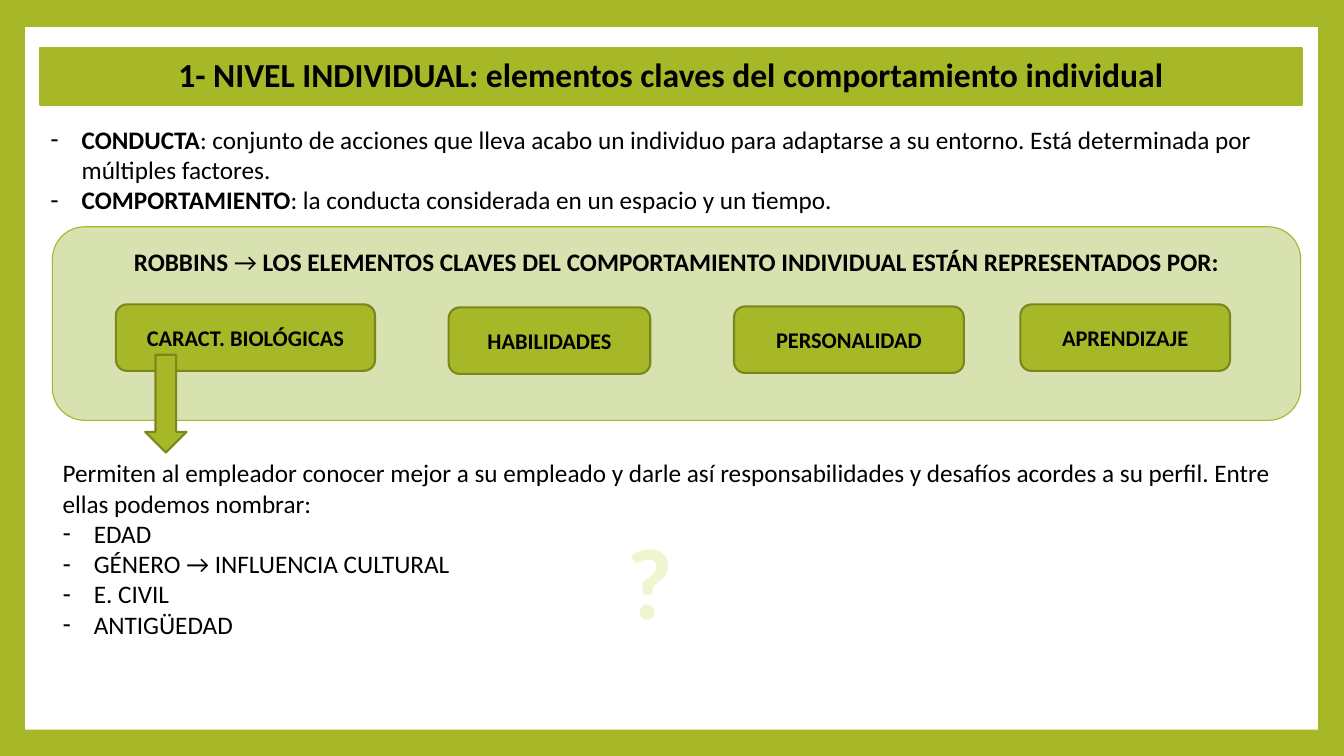
import pptx
import pptx.util
import pptx.dml.color
import pptx.enum.shapes
import pptx.enum.text
import pptx.oxml
import pptx.oxml.ns

Inches = pptx.util.Inches
Pt = pptx.util.Pt
RGBColor = pptx.dml.color.RGBColor
SHAPE = pptx.enum.shapes.MSO_SHAPE
ALIGN = pptx.enum.text.PP_ALIGN
ANCHOR = pptx.enum.text.MSO_ANCHOR
AUTO_SIZE = pptx.enum.text.MSO_AUTO_SIZE

GREEN = RGBColor(0xA6, 0xB7, 0x27)
DARK_GREEN = RGBColor(0x7B, 0x87, 0x1D)
PALE_GREEN = RGBColor(0xD8, 0xE1, 0xB0)
FAINT_GREEN = RGBColor(0xF0, 0xF5, 0xD0)
WHITE = RGBColor(0xFF, 0xFF, 0xFF)
BLACK = RGBColor(0x00, 0x00, 0x00)

FONT = "Calibri"
HANGING = Inches(0.31)
FRAME_FORMAT = {"word_wrap": True, "auto_size": AUTO_SIZE.NONE}
PARAGRAPH_FORMAT = {"space_before": Pt(0), "space_after": Pt(0), "line_spacing": 1.0}


def apply_format(target, values):
    for name, value in values.items():
        setattr(target, name, value)


def place(part, box):
    lengths = [Inches(value) for value in box]
    apply_format(part, dict(zip(("left", "top", "width", "height"), lengths)))


def paint(part, fill, line, width):
    part.fill.solid()
    part.fill.fore_color.rgb = fill
    if line is None:
        part.line.fill.background()
    else:
        part.line.color.rgb = line
        part.line.width = Pt(width)


def draw(slide, kind, box, fill, line=None, width=1.5):
    part = slide.shapes.add_shape(kind, *[Inches(value) for value in box])
    part.shadow.inherit = False
    paint(part, fill, line, width)
    return part


def set_bullet(paragraph, mark):
    """Give a paragraph a hanging bullet, or none when mark is empty."""
    properties = paragraph._p.get_or_add_pPr()
    properties.set("marL", str(HANGING if mark else 0))
    properties.set("indent", str(-HANGING if mark else 0))
    tag = "a:buChar" if mark else "a:buNone"
    bullet = pptx.oxml.parse_xml(f"<{tag} {pptx.oxml.ns.nsdecls('a')}/>")
    if mark:
        bullet.set("char", mark)
    properties.append(bullet)


def write(part, paragraphs, size, align=ALIGN.LEFT, anchor=ANCHOR.TOP, color=BLACK):
    """Each paragraph is (bullet mark, [(text, bold), ...])."""
    frame = part.text_frame
    apply_format(frame, {**FRAME_FORMAT, "vertical_anchor": anchor})
    for index, (mark, runs) in enumerate(paragraphs):
        paragraph = frame.add_paragraph() if index else frame.paragraphs[0]
        apply_format(paragraph, {**PARAGRAPH_FORMAT, "alignment": align})
        set_bullet(paragraph, mark)
        for text, bold in runs:
            run = paragraph.add_run()
            run.text = text
            apply_format(run.font, {"name": FONT, "size": Pt(size), "bold": bold})
            run.font.color.rgb = color


def add_background(slide, box):
    slide.background.fill.solid()
    slide.background.fill.fore_color.rgb = GREEN
    page = draw(slide, SHAPE.RECTANGLE, box, WHITE)
    # The page lies behind the placeholders
    page.element.getparent().insert(2, page.element)


def add_title(slide, box):
    title = slide.shapes.title
    place(title, box)
    title.element.spPr.append(pptx.oxml.parse_xml(
        f"<a:prstGeom {pptx.oxml.ns.nsdecls('a')} prst='roundRect'><a:avLst/></a:prstGeom>"))
    paint(title, GREEN, GREEN, 1.5)
    heading = "1- NIVEL INDIVIDUAL: elementos claves del comportamiento individual"
    write(title, [("", [(heading, True)])], 24, ALIGN.CENTER)


def add_definitions(slide, box):
    definitions = slide.placeholders[1]
    place(definitions, box)
    write(definitions, [
        ("-", [("CONDUCTA", True),
               (": conjunto de acciones que lleva acabo un individuo para adaptarse "
                "a su entorno. Está determinada por múltiples factores.", False)]),
        ("-", [("COMPORTAMIENTO", True),
               (": la conducta considerada en un espacio y un tiempo.", False)]),
    ], 18)


def add_key_elements(slide, box):
    left, top, _, _ = box
    panel = draw(slide, SHAPE.ROUNDED_RECTANGLE, box, PALE_GREEN, GREEN, 0.79)
    panel.text_frame.margin_top = Inches(0.1)
    write(panel, [("", [
        ("ROBBINS ", True), ("→ ", False),
        ("LOS ELEMENTOS CLAVES DEL COMPORTAMIENTO INDIVIDUAL ESTÁN REPRESENTADOS POR:", True),
    ])], 18, ALIGN.CENTER)

    # Name, offset from the panel, width
    elements = [
        ("CARACT. BIOLÓGICAS", 0.63, 0.77, 2.57),
        ("HABILIDADES", 3.93, 0.8, 2),
        ("PERSONALIDAD", 6.76, 0.79, 2.28),
        ("APRENDIZAJE", 9.6, 0.77, 2.08),
    ]
    for name, across, down, width in elements:
        element = draw(slide, SHAPE.ROUNDED_RECTANGLE,
                       (left + across, top + down, width, 0.66), GREEN, DARK_GREEN)
        write(element, [("", [(name, True)])], 16, ALIGN.CENTER, ANCHOR.MIDDLE)

    # Arrow from the biological traits to their explanation
    draw(slide, SHAPE.DOWN_ARROW, (left + 0.92, top + 1.27, 0.41, 0.97), GREEN, DARK_GREEN)


def add_biological_traits(slide, box):
    left, top, _, _ = box
    traits = slide.placeholders[2]
    place(traits, box)
    introduction = ("Permiten al empleador conocer mejor a su empleado y darle así "
                    "responsabilidades y desafíos acordes a su perfil. "
                    "Entre ellas podemos nombrar:")
    names = ["EDAD", "GÉNERO → INFLUENCIA CULTURAL", "E. CIVIL", "ANTIGÜEDAD"]
    write(traits, [("", [(introduction, False)])]
          + [("-", [(name, False)]) for name in names], 18)

    # Faint question mark
    question_box = (left + 5.34, top + 0.61, 1.18, 1.31)
    question = slide.shapes.add_textbox(*[Inches(value) for value in question_box])
    write(question, [("", [("?", True)])], 72, ALIGN.CENTER, color=FAINT_GREEN)


def main():
    deck = pptx.Presentation()
    apply_format(deck, {"slide_width": Inches(13.33), "slide_height": Inches(7.5)})
    slide = deck.slides.add_slide(deck.slide_layouts.get_by_name("Two Content"))
    add_background(slide, (0.25, 0.27, 12.82, 6.97))
    add_title(slide, (0.4, 0.48, 12.51, 0.56))
    add_definitions(slide, (0.4, 1.18, 12.51, 1.01))
    add_key_elements(slide, (0.52, 2.25, 12.38, 1.92))
    add_biological_traits(slide, (0.52, 4.49, 12.38, 1.92))
    deck.save("out.pptx")


if __name__ == "__main__":
    main()
